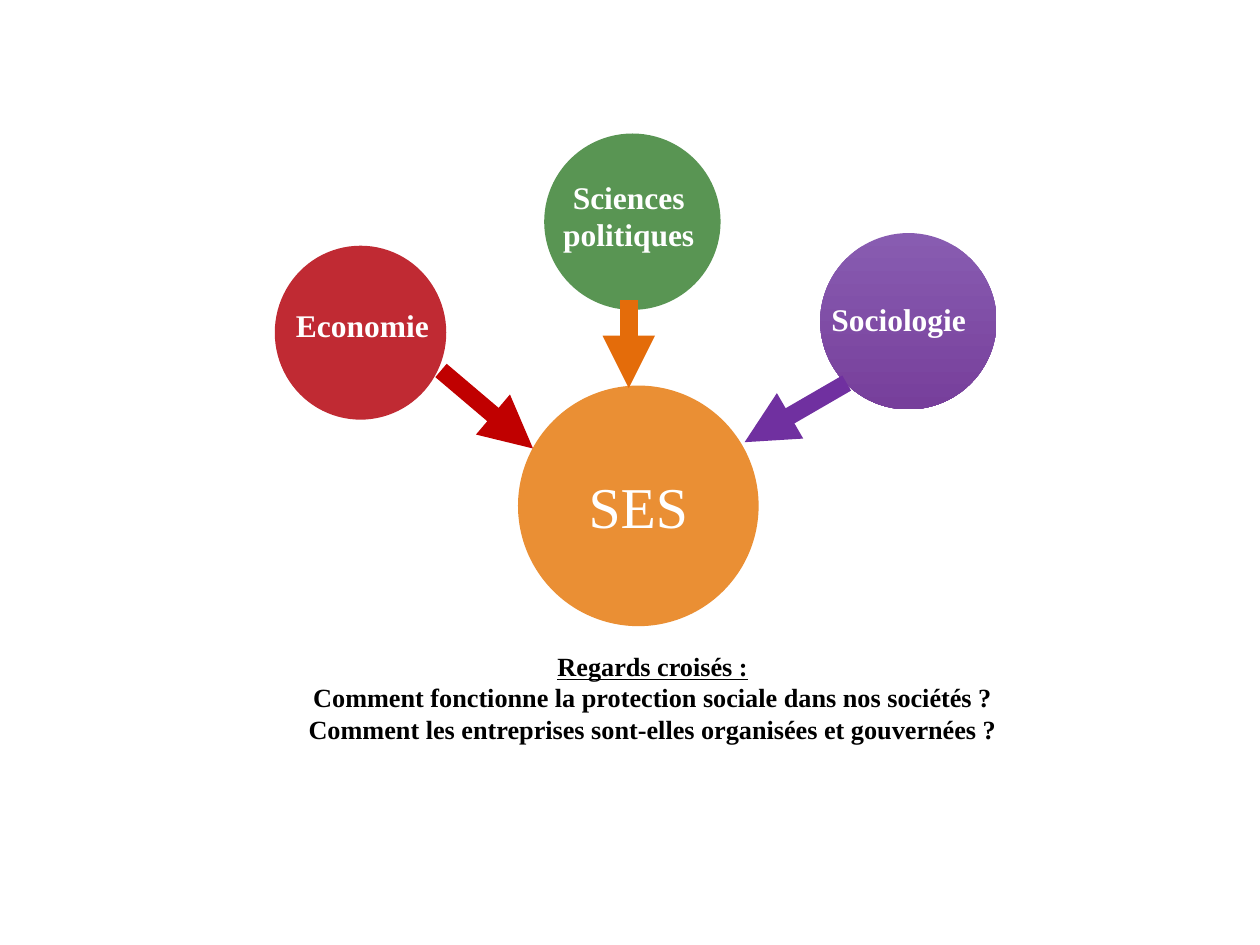
from dataclasses import dataclass

from lxml.etree import SubElement
from pptx import Presentation
from pptx.dml.color import RGBColor
from pptx.enum.shapes import MSO_CONNECTOR, MSO_SHAPE
from pptx.enum.text import MSO_ANCHOR, PP_ALIGN
from pptx.oxml.ns import qn
from pptx.util import Pt


@dataclass(frozen=True)
class Theme:
    font: str = "Times New Roman"
    white: str = "FFFFFF"
    black: str = "000000"
    center_fill: str = "EA8F34"
    economy: tuple = ("C02A33",)
    sociology: tuple = ("885CB1", "773F9B")
    politics: tuple = ("599553",)
    economy_arrow: str = "C00000"
    sociology_arrow: str = "7030A0"
    politics_arrow: str = "E46C0A"
    center_size: float = 33
    label_size: float = 18
    caption_size: float = 15
    arrow_width: float = 10


THEME = Theme()


def write_text(paragraph, text, *, size, color, bold=False, underline=False, align=PP_ALIGN.LEFT):
    paragraph.alignment = align
    run = paragraph.add_run()
    run.text = text
    font = run.font
    font.name = THEME.font
    font.size = Pt(size)
    font.bold = bold
    font.underline = underline
    font.color.rgb = RGBColor.from_string(color)


def add_circle(slide, left, top, width, height, colors):
    """Draw a borderless ellipse; two colors make a top-to-bottom gradient."""
    shape = slide.shapes.add_shape(MSO_SHAPE.OVAL, Pt(left), Pt(top), Pt(width), Pt(height))
    shape.shadow.inherit = False
    shape.line.fill.background()
    if len(colors) == 1:
        shape.fill.solid()
        shape.fill.fore_color.rgb = RGBColor.from_string(colors[0])
    else:
        shape.fill.gradient()
        shape.fill.gradient_angle = 270
        for stop, color in zip(shape.fill.gradient_stops, colors):
            stop.color.rgb = RGBColor.from_string(color)
    return shape


def add_text_box(slide, left, top, width, height):
    text_box = slide.shapes.add_textbox(Pt(left), Pt(top), Pt(width), Pt(height))
    text_box.text_frame.word_wrap = True
    return text_box.text_frame


def add_arrow(slide, start_x, start_y, end_x, end_y, color):
    arrow = slide.shapes.add_connector(
        MSO_CONNECTOR.STRAIGHT, Pt(start_x), Pt(start_y), Pt(end_x), Pt(end_y))
    arrow.line.width = Pt(THEME.arrow_width)
    arrow.line.color.rgb = RGBColor.from_string(color)
    properties = arrow.line._get_or_add_ln()
    SubElement(properties, qn("a:tailEnd"), type="triangle")
    SubElement(properties.getparent(), qn("a:effectLst"))


def add_diagram(slide, left, top):
    # Central subject
    center = add_circle(slide, left + 139, top + 144.3, 137.5, 137.5, (THEME.center_fill,))
    frame = center.text_frame
    frame.margin_left = frame.margin_top = frame.margin_right = frame.margin_bottom = 0
    frame.vertical_anchor = MSO_ANCHOR.MIDDLE
    write_text(frame.paragraphs[0], "SES", size=THEME.center_size, color=THEME.white,
               align=PP_ALIGN.CENTER)

    # Disciplines: label, colors, circle box, label box, alignment
    disciplines = [
        ("Economie", THEME.economy, (0, 64.4, 98, 99.4), (5, 95.4, 92.2, 29), PP_ALIGN.LEFT),
        ("Sociologie", THEME.sociology, (311.7, 57.2, 100.8, 100.8), (311, 91.8, 96.5, 29),
         PP_ALIGN.LEFT),
        ("Sciences politiques", THEME.politics, (154, 0.3, 100.8, 100.8),
         (151.9, 21.9, 100.8, 51), PP_ALIGN.CENTER),
    ]
    for label, colors, circle_box, label_box, align in disciplines:
        x, y, width, height = circle_box
        add_circle(slide, left + x, top + y, width, height, colors)
        x, y, width, height = label_box
        frame = add_text_box(slide, left + x, top + y, width, height)
        write_text(frame.paragraphs[0], label, size=THEME.label_size, color=THEME.white,
                   bold=True, align=align)

    # Arrows towards the central subject
    arrows = [
        (326.8, 142.9, 268.5, 176.7, THEME.sociology_arrow),
        (95, 135.7, 147.6, 180.3, THEME.economy_arrow),
        (202.3, 95.4, 202.3, 145.8, THEME.politics_arrow),
    ]
    for start_x, start_y, end_x, end_y, color in arrows:
        add_arrow(slide, left + start_x, top + start_y, left + end_x, top + end_y, color)


def add_caption(slide, left, top, width, height):
    lines = [
        "Regards croisés :",
        "Comment fonctionne la protection sociale dans nos sociétés ?",
        "Comment les entreprises sont-elles organisées et gouvernées ?",
    ]
    frame = add_text_box(slide, left, top, width, height)
    for index, line in enumerate(lines):
        paragraph = frame.add_paragraph() if index else frame.paragraphs[0]
        write_text(paragraph, line, size=THEME.caption_size, color=THEME.black, bold=True,
                   underline=index == 0, align=PP_ALIGN.CENTER)


def main():
    presentation = Presentation()
    presentation.slide_width = Pt(720)
    presentation.slide_height = Pt(540)
    slide = presentation.slides.add_slide(presentation.slide_layouts[6])
    add_diagram(slide, 157, 76)
    add_caption(slide, 105, 368, 536, 83.5)
    presentation.save("out.pptx")


if __name__ == "__main__":
    main()
